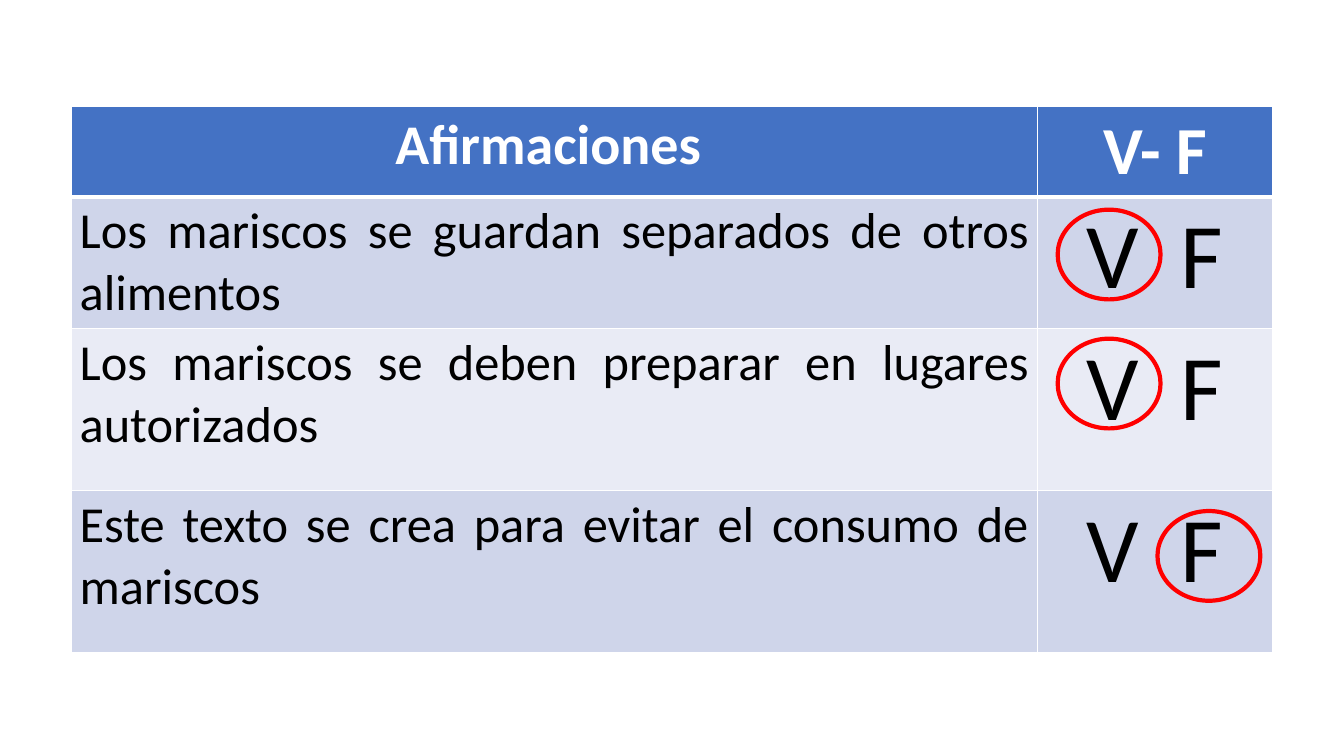
"""Build a true-or-false table slide with the correct answers circled."""
from dataclasses import dataclass

from lxml import etree
from pptx import Presentation
from pptx import util as u
from pptx.dml.color import RGBColor
from pptx.enum import shapes, text
from pptx.oxml.ns import qn

HEADINGS = ("Afirmaciones ", "V- F")
STATEMENTS = (
    ("Los mariscos se guardan separados de otros alimentos", "V", 0.14),
    ("Los mariscos se deben preparar en lugares autorizados", "V", 0.12),
    ("Este texto se crea para evitar el consumo de mariscos", "F", 0.22),
)
CHOICES = ("V", "F")
SLIDE = (13.33, 7.5)
LEFT, TOP = 0.71, 1.06
COLUMNS = (9.58, 2.33)
ROWS = (0.88, 1.3, 1.61, 1.61)
INSET = (0.08, 0.04)
CIRCLE = (1.02, 0.89)
CIRCLE_OFFSET = {"V": 0.2, "F": 1.19}


@dataclass(frozen=True)
class Theme:
    font: str = "Calibri"
    header: str = "4472C4"
    bands: tuple = ("CFD5EA", "E9EBF5")
    white: str = "FFFFFF"
    black: str = "000000"
    mark: str = "FF0000"
    heading_sizes: tuple = (40, 48)
    statement_size: int = 36
    choice_size: int = 66
    choice_gap: int = 15
    rule: int = 1
    header_rule: int = 3
    mark_width: int = 3


THEME = Theme()


def add_borders(cell, top, bottom):
    properties = cell._tc.get_or_add_tcPr()
    widths = {"L": THEME.rule, "R": THEME.rule, "T": top, "B": bottom}
    for side, width in widths.items():
        border = etree.SubElement(properties, qn(f"a:ln{side}"), w=str(u.Pt(width)))
        fill = etree.SubElement(border, qn("a:solidFill"))
        etree.SubElement(fill, qn("a:srgbClr"), val=THEME.white)


def style_cell(cell, row, fill):
    header_rule, rule = THEME.header_rule, THEME.rule
    add_borders(cell, header_rule if row == 1 else rule, header_rule if row == 0 else rule)
    cell.fill.solid()
    cell.fill.fore_color.rgb = RGBColor.from_string(fill)
    cell.margin_left = cell.margin_right = u.Inches(INSET[0])
    cell.margin_top = cell.margin_bottom = u.Inches(INSET[1])


def style_paragraph(paragraph, size, color, align, bold=False):
    paragraph.alignment = align
    font = paragraph.font
    font.name, font.size, font.bold = THEME.font, u.Pt(size), bold
    font.color.rgb = RGBColor.from_string(color)
    for run in paragraph.runs:
        run.font.size, run.font.bold = font.size, bold
        run.font.color.rgb = font.color.rgb


def write_choices(paragraph):
    for part in (CHOICES[0], " ", CHOICES[1]):
        run = paragraph.add_run()
        run.text = part
        if part == " ":
            run._r.get_or_add_rPr().set("spc", str(THEME.choice_gap * 100))


def add_circle(slide, answer, top):
    left = LEFT + COLUMNS[0] + CIRCLE_OFFSET[answer]
    box = (u.Inches(length) for length in (left, top, *CIRCLE))
    circle = slide.shapes.add_shape(shapes.MSO_SHAPE.OVAL, *box)
    circle.shadow.inherit = False
    circle.fill.background()
    circle.line.color.rgb = RGBColor.from_string(THEME.mark)
    circle.line.width = u.Pt(THEME.mark_width)


def main():
    deck = Presentation()
    deck.slide_width, deck.slide_height = map(u.Inches, SLIDE)
    slide = deck.slides.add_slide(deck.slide_layouts[6])
    frame = (u.Inches(length) for length in (LEFT, TOP, sum(COLUMNS), sum(ROWS)))
    quiz = slide.shapes.add_table(len(ROWS), len(COLUMNS), *frame).table
    for column, width in zip(quiz.columns, COLUMNS):
        column.width = u.Inches(width)
    for row, height in zip(quiz.rows, ROWS):
        row.height = u.Inches(height)

    center, justify = text.PP_ALIGN.CENTER, text.PP_ALIGN.JUSTIFY
    for column, (heading, size) in enumerate(zip(HEADINGS, THEME.heading_sizes)):
        cell = quiz.cell(0, column)
        style_cell(cell, 0, THEME.header)
        cell.text = heading
        style_paragraph(cell.text_frame.paragraphs[0], size, THEME.white, center, True)

    for row, (statement, answer, drop) in enumerate(STATEMENTS, 1):
        claim, choice = quiz.cell(row, 0), quiz.cell(row, 1)
        for cell in (claim, choice):
            style_cell(cell, row, THEME.bands[(row - 1) % 2])
        claim.text = statement
        style_paragraph(claim.text_frame.paragraphs[0], THEME.statement_size, THEME.black, justify)
        letters = choice.text_frame.paragraphs[0]
        write_choices(letters)
        style_paragraph(letters, THEME.choice_size, THEME.black, center)
        add_circle(slide, answer, TOP + sum(ROWS[:row]) + drop)

    deck.save("out.pptx")


if __name__ == "__main__":
    main()
